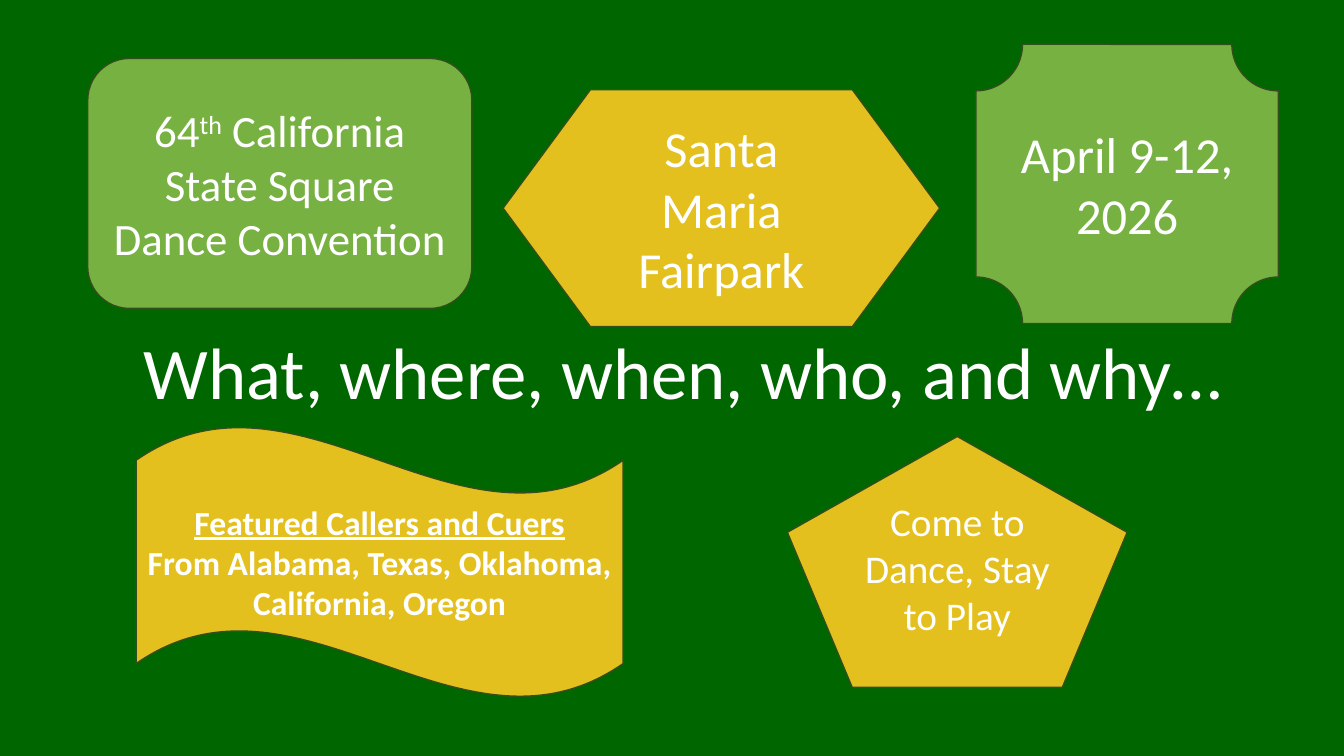
import pptx
import pptx.util
import pptx.dml.color
import pptx.enum.shapes
import pptx.enum.text

Inches, Pt = pptx.util.Inches, pptx.util.Pt
RGBColor = pptx.dml.color.RGBColor
SHAPE = pptx.enum.shapes.MSO_SHAPE
ANCHOR = pptx.enum.text.MSO_ANCHOR

BACKGROUND = RGBColor(0x00, 0x66, 0x00)
GREEN = RGBColor(0x77, 0xB1, 0x42)
GOLD = RGBColor(0xE3, 0xC0, 0x1E)
OUTLINE = RGBColor(0x34, 0x4E, 0x1D)
WHITE = RGBColor(0xFF, 0xFF, 0xFF)


def write_centered(sp, runs, size, anchor):
    """Fill the shape's only paragraph with runs and return it."""
    tf = sp.text_frame
    tf.word_wrap = True
    tf.vertical_anchor = anchor
    p = tf.paragraphs[0]
    p.alignment = pptx.enum.text.PP_ALIGN.CENTER
    for text in runs:
        p.add_run().text = text
    p.font.name = "Calibri"
    p.font.size = Pt(size)
    p.font.color.rgb = WHITE
    return p


def add_title(s, box, text):
    sp = s.shapes.add_textbox(*map(Inches, box))
    p = write_centered(sp, [text], 52, ANCHOR.BOTTOM)
    p.line_spacing = 0.9


def add_badge(s, box, kind, fill, runs, size):
    sp = s.shapes.add_shape(kind, *map(Inches, box))
    sp.shadow.inherit = False
    sp.fill.solid()
    sp.fill.fore_color.rgb = fill
    sp.line.color.rgb = OUTLINE
    sp.line.width = Pt(1)
    write_centered(sp, runs, size, ANCHOR.MIDDLE)
    return sp


def add_when(s, box):
    add_badge(s, box, SHAPE.PLAQUE, GREEN, ["April 9-12, 2026"], 36)


def add_where(s, box):
    add_badge(s, box, SHAPE.FLOWCHART_PREPARATION, GOLD, ["Santa Maria Fairpark"], 36)


def add_who(s, box):
    sp = add_badge(s, box, SHAPE.WAVE, GOLD, [], 24)
    p = sp.text_frame.paragraphs[0]
    heading = p.add_run()
    heading.text = "Featured Callers and Cuers"
    heading.font.underline = True
    p.add_line_break()
    p.add_run().text = "From Alabama, Texas, Oklahoma, California, Oregon"
    p.font.bold = True


def add_what(s, box):
    runs = ["64", "th", " California State Square Dance Convention"]
    sp = add_badge(s, box, SHAPE.FLOWCHART_ALTERNATE_PROCESS, GREEN, runs, 32)
    ordinal = sp.text_frame.paragraphs[0].runs[1]
    ordinal._r.get_or_add_rPr().set("baseline", "30000")


def add_why(s, box):
    sp = add_badge(s, box, SHAPE.REGULAR_PENTAGON, GOLD, ["Come to Dance, Stay to Play"], 28)
    sp.text_frame.margin_bottom = Inches(0.52)


def main():
    prs = pptx.Presentation()
    prs.slide_width, prs.slide_height = Inches(13.33), Inches(7.5)
    s = prs.slides.add_slide(prs.slide_layouts[6])
    s.background.fill.solid()
    s.background.fill.fore_color.rgb = BACKGROUND

    add_title(s, (1.08, 1.25, 11.39, 2.92), "What, where, when, who, and why…")
    add_when(s, (9.68, 0.44, 3, 2.77))
    add_where(s, (4.99, 0.89, 4.33, 2.35))
    add_who(s, (1.35, 4.23, 4.83, 2.69))
    add_what(s, (0.87, 0.58, 3.81, 2.48))
    add_why(s, (7.81, 4.33, 3.37, 2.49))
    prs.save("out.pptx")


if __name__ == "__main__":
    main()
